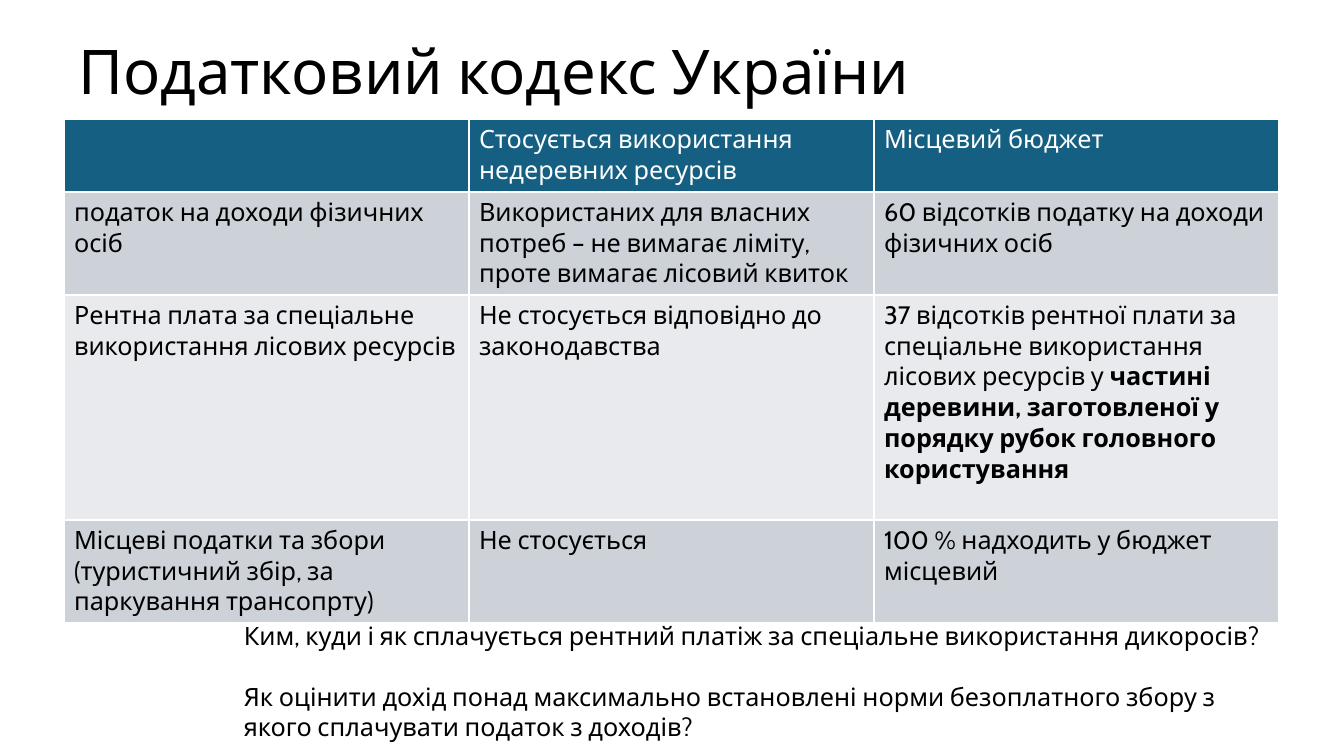
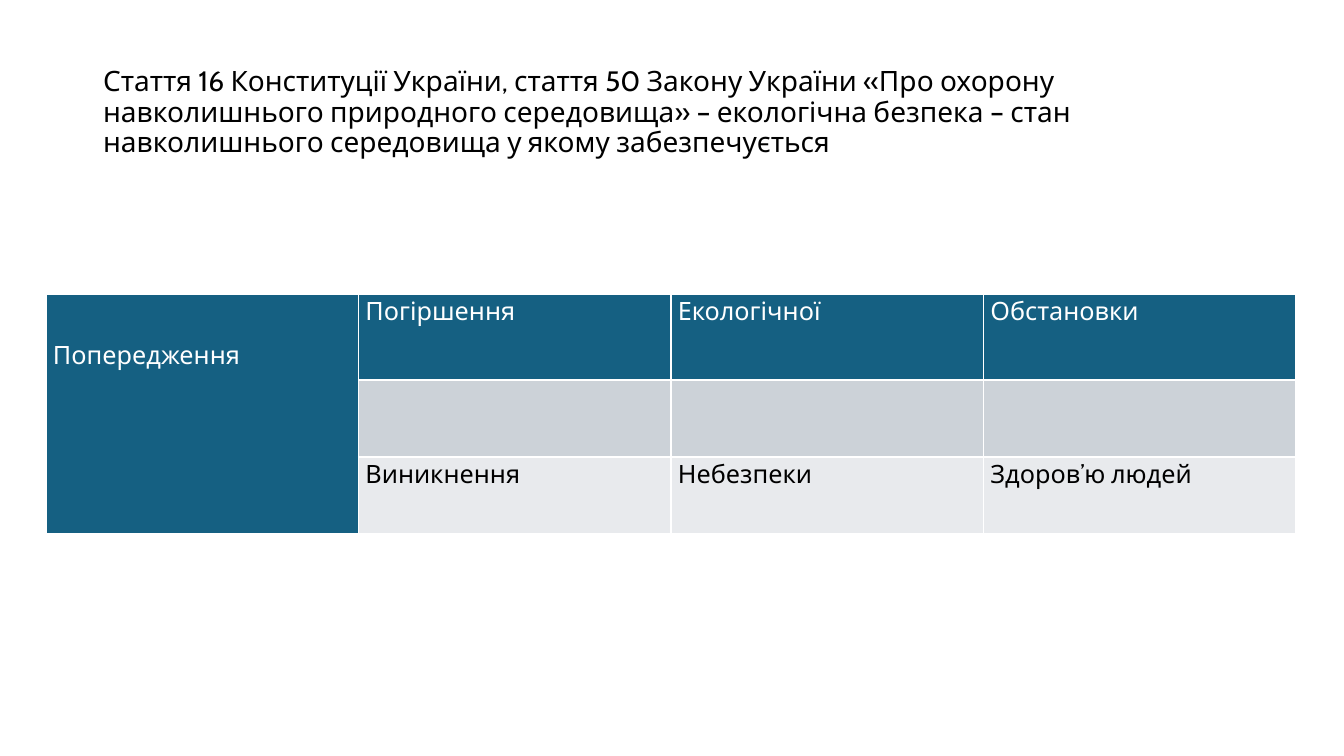
from lxml import etree
from pptx import Presentation
from pptx.dml.color import RGBColor
from pptx.enum.text import MSO_ANCHOR, MSO_AUTO_SIZE, PP_ALIGN
from pptx.oxml.ns import qn
from pptx.util import Pt

LEFT, JUSTIFY = PP_ALIGN.LEFT, PP_ALIGN.JUSTIFY
MIDDLE = MSO_ANCHOR.MIDDLE
NO_AUTOFIT = MSO_AUTO_SIZE.NONE

EMU_PER_PX = 914400 / 100.8
SLIDE_SIZE = (1344, 756)
TITLE_ONLY = 5

FONT = "Cabin"
TEXT_SIZE = 18
BLACK, WHITE = "000000", "FFFFFF"
HEADER_FILL = "156082"
BAND_FILLS = ("CCD2D8", "E8EAED")

TAX_ROWS = [
    ["", "Стосується використання недеревних ресурсів", "Місцевий бюджет"],
    ["податок на доходи фізичних осіб",
     "Використаних для власних потреб – не вимагає ліміту, проте вимагає лісовий квиток",
     "60 відсотків податку на доходи фізичних осіб"],
    ["Рентна плата за спеціальне використання лісових ресурсів",
     "Не стосується відповідно до законодавства",
     ("37 відсотків рентної плати за спеціальне використання лісових ресурсів у ",
      "частині деревини, заготовленої у порядку рубок головного користування")],
    ["Місцеві податки та збори (туристичний збір, за паркування трансопрту)",
     "Не стосується", "100 % надходить у бюджет місцевий"],
]
TAX_QUESTIONS = [
    "Ким, куди і як сплачується рентний платіж за спеціальне використання дикоросів?",
    "Як оцінити дохід понад максимально встановлені норми безоплатного збору "
    "з якого сплачувати податок з доходів?",
]
SAFETY_TITLE = (
    "Стаття 16 Конституції України, стаття 50 Закону України «Про охорону "
    "навколишнього природного середовища» – екологічна безпека – стан "
    "навколишнього середовища у якому забезпечується")
SAFETY_ROWS = [
    ["Попередження", "Погіршення", "Екологічної", "Обстановки"],
    ["", "", "", ""],
    ["", "Виникнення", "Небезпеки", "Здоров’ю людей"],
]


def px(length):
    return round(length * EMU_PER_PX)


def color(value):
    return RGBColor.from_string(value)


def style_paragraph(paragraph, size, font_color, align=LEFT):
    paragraph.alignment = align
    paragraph.font.name = FONT
    paragraph.font.size = Pt(size)
    paragraph.font.color.rgb = color(font_color)


def add_titled_slide(presentation, text, box, size):
    """Add a slide with its title moved into the box."""
    slide = presentation.slides.add_slide(presentation.slide_layouts[TITLE_ONLY])
    title = slide.shapes.title
    title.left, title.top, title.width, title.height = map(px, box)
    frame = title.text_frame
    frame.word_wrap = True
    frame.auto_size = NO_AUTOFIT
    frame.vertical_anchor = MIDDLE
    frame.text = text
    paragraph = frame.paragraphs[0]
    paragraph.line_spacing = 0.9
    style_paragraph(paragraph, size, BLACK)
    return slide


def set_borders(cell):
    """Draw thin white lines on all sides, ahead of the fill in the XML."""
    properties = cell._tc.get_or_add_tcPr()
    for position, side in enumerate(("lnL", "lnR", "lnT", "lnB")):
        line = etree.Element(qn(f"a:{side}"), w=str(Pt(1)))
        fill = etree.SubElement(line, qn("a:solidFill"))
        etree.SubElement(fill, qn("a:srgbClr"), val=WHITE)
        properties.insert(position, line)


def fill_cell(cell, content, row_index):
    """Write the content; the second part of a pair is bold."""
    is_header = row_index == 0
    cell.fill.solid()
    cell.fill.fore_color.rgb = color(
        HEADER_FILL if is_header else BAND_FILLS[(row_index - 1) % 2])
    set_borders(cell)
    paragraph = cell.text_frame.paragraphs[0]
    style_paragraph(paragraph, TEXT_SIZE, WHITE if is_header else BLACK)
    parts = (content,) if isinstance(content, str) else content
    for part_index, part in enumerate(parts):
        if part:
            run = paragraph.add_run()
            run.text = part
            if part_index:
                run.font.bold = True


def add_banded_table(slide, rows, left, top, width, row_heights):
    column_count = len(rows[0])
    frame = slide.shapes.add_table(
        len(rows), column_count, px(left), px(top), px(width), px(sum(row_heights)))
    table = frame.table
    table.first_row = table.horz_banding = False
    for column in table.columns:
        column.width = px(width / column_count)
    for row_index, (contents, height) in enumerate(zip(rows, row_heights)):
        table.rows[row_index].height = px(height)
        for column_index, content in enumerate(contents):
            fill_cell(table.cell(row_index, column_index), content, row_index)
    return table


def add_questions(slide, questions, box):
    frame = slide.shapes.add_textbox(*map(px, box)).text_frame
    frame.word_wrap = True
    for index, question in enumerate(questions):
        paragraph = frame.add_paragraph() if index else frame.paragraphs[0]
        paragraph.text = question
        paragraph.space_before = Pt(22 if index else 0)
        style_paragraph(paragraph, TEXT_SIZE, BLACK)


def build_tax_slide(presentation):
    slide = add_titled_slide(
        presentation, "Податковий кодекс України", (68, 30, 1174, 89), 44)
    add_banded_table(slide, TAX_ROWS, 64, 119, 1215, (73, 103, 225, 102))
    add_questions(slide, TAX_QUESTIONS, (234, 615, 1046, 132))


def build_safety_slide(presentation):
    slide = add_titled_slide(presentation, SAFETY_TITLE, (93, 40, 1159, 146), 20)
    table = add_banded_table(slide, SAFETY_ROWS, 46, 294, 1250, (86, 77, 77))
    # Tight margins and justified text
    for cell in table.iter_cells():
        cell.margin_left = cell.margin_right = px(7)
        cell.margin_top = cell.margin_bottom = 0
        paragraph = cell.text_frame.paragraphs[0]
        paragraph.alignment = JUSTIFY
        paragraph.line_spacing = 1.07
        paragraph.space_after = Pt(8)
    # First column is one tall cell with lowered text
    tall_cell = table.cell(0, 0)
    tall_cell.merge(table.cell(len(SAFETY_ROWS) - 1, 0))
    tall_cell.margin_top = px(44)


def main():
    presentation = Presentation()
    presentation.slide_width, presentation.slide_height = map(px, SLIDE_SIZE)
    build_tax_slide(presentation)
    build_safety_slide(presentation)
    presentation.save("out.pptx")


if __name__ == "__main__":
    main()
